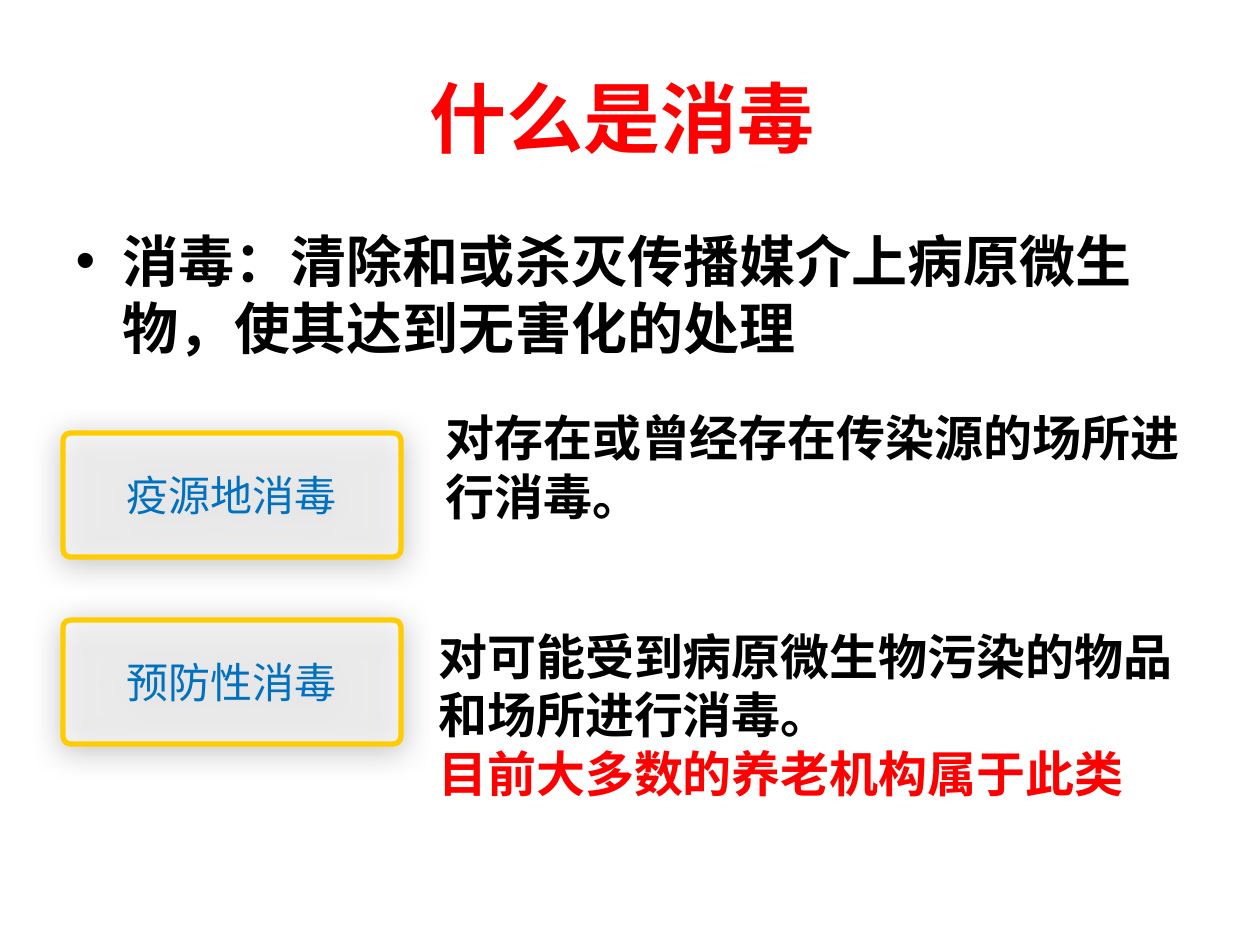
"""Build the slide that defines disinfection and its two kinds."""
from lxml import etree
from pptx import Presentation
from pptx import util as u
from pptx.dml.color import RGBColor
from pptx.enum import shapes, text
from pptx.oxml import parse_xml
from pptx.oxml.ns import nsdecls, qn

RED = RGBColor(0xFF, 0x00, 0x00)
BLACK = RGBColor(0x00, 0x00, 0x00)
WHITE = RGBColor(0xFF, 0xFF, 0xFF)
BLUE = RGBColor(0x00, 0x70, 0xC0)
YELLOW = RGBColor(0xFF, 0xCC, 0x00)
CJK = "Noto Sans CJK SC"

TITLE = "什么是消毒 "
DEFINITION = "消毒：清除和或杀灭传播媒介上病原微生物，使其达到无害化的处理"
KINDS = [
    ("疫源地消毒", 433, (433, 401, 771, 131),
     [("对存在或曾经存在传染源的场所进行消毒。", "Arial", BLACK)]),
    ("预防性消毒", 620, (426, 620, 771, 190),
     [("对可能受到病原微生物污染的物品和场所进行消毒。", "Arial", BLACK),
      ("目前大多数的养老机构属于此类", CJK, RED)]),
]
LABEL_LEFT, LABEL_WIDTH, LABEL_HEIGHT = 63, 338, 124


def px(length):
    return u.Emu(round(length * 914400 / 126))


def place(shape, *bounds):
    shape.left, shape.top, shape.width, shape.height = map(px, bounds)


def add_span(para, words, size, font, color, bold=True):
    span = para.add_run()
    span.text = words
    span.font.size = u.Pt(size)
    span.font.name = font
    span.font.bold = bold
    span.font.color.rgb = color
    properties = span.font._element
    latin = properties.find(qn("a:latin"))
    latin.addnext(parse_xml(f'<a:ea {nsdecls("a")} typeface="{CJK}"/>'))


def add_label(page, words, top):
    label = page.shapes.add_shape(
        shapes.MSO_SHAPE.ROUNDED_RECTANGLE,
        *map(px, (LABEL_LEFT, top, LABEL_WIDTH, LABEL_HEIGHT)))
    label.adjustments[0] = 0.06
    label.fill.solid()
    label.fill.fore_color.rgb = WHITE
    color = label.fill._xPr.find(qn("a:solidFill"))[0]
    etree.SubElement(color, qn("a:alpha"), val="60000")
    label.line.color.rgb = YELLOW
    label.line.width = u.Pt(3)
    label.shadow.inherit = False
    effects = label._element.spPr.find(qn("a:effectLst"))
    effects.append(parse_xml(
        f'<a:outerShdw {nsdecls("a")} blurRad="{u.Pt(17.8)}" dist="{u.Pt(3)}" '
        'dir="5220000" rotWithShape="0"><a:srgbClr val="000000">'
        '<a:alpha val="33000"/></a:srgbClr></a:outerShdw>'))
    frame = label.text_frame
    frame.vertical_anchor = text.MSO_ANCHOR.MIDDLE
    para = frame.paragraphs[0]
    para.alignment = text.PP_ALIGN.CENTER
    add_span(para, words, 24, CJK, BLUE, bold=False)


def add_explanation(page, bounds, lines):
    frame = page.shapes.add_textbox(*map(px, bounds)).text_frame
    frame.word_wrap = True
    frame.auto_size = text.MSO_AUTO_SIZE.SHAPE_TO_FIT_TEXT
    for index, (words, font, color) in enumerate(lines):
        para = frame.add_paragraph() if index else frame.paragraphs[0]
        add_span(para, words, 28, font, color)


def main():
    deck = Presentation()
    deck.slide_width, deck.slide_height = px(1260), px(945)
    page = deck.slides.add_slide(deck.slide_layouts[1])

    title, body = page.shapes.title, page.placeholders[1]
    place(title, 178, 38, 906, 157)
    add_span(title.text_frame.paragraphs[0], TITLE, 44, "Calibri", RED)

    place(body, 63, 220, 1134, 624)
    para = body.text_frame.paragraphs[0]
    para.space_before = u.Pt(0)
    add_span(para, DEFINITION, 32, "Calibri", BLACK)

    for name, top, bounds, lines in KINDS:
        add_label(page, name, top)
        add_explanation(page, bounds, lines)

    deck.save("out.pptx")


if __name__ == "__main__":
    main()
